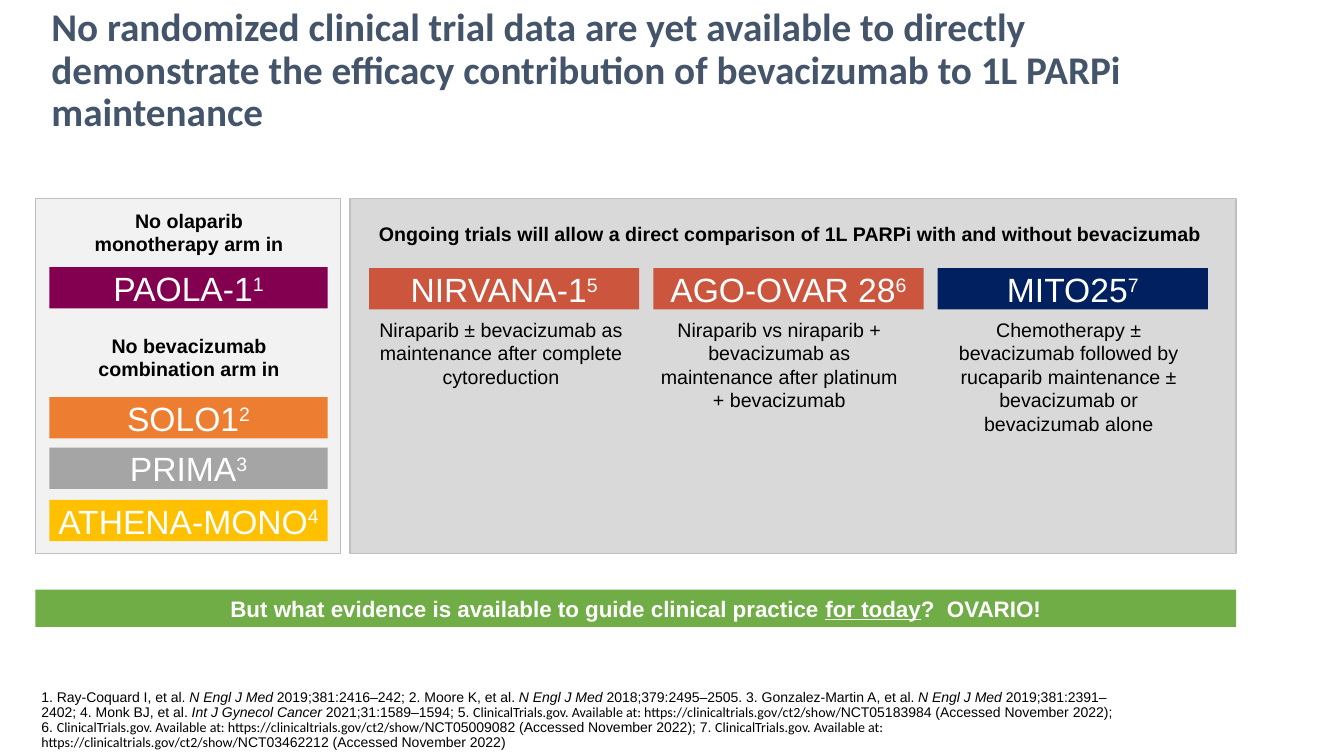
from lxml import etree
from pptx import Presentation
from pptx.dml.color import RGBColor
from pptx.enum.shapes import MSO_SHAPE
from pptx.enum.text import MSO_ANCHOR, MSO_AUTO_SIZE, PP_ALIGN
from pptx.oxml.ns import qn
from pptx.util import Inches, Pt

RECTANGLE = MSO_SHAPE.RECTANGLE
MIDDLE, BOTTOM, TOP = MSO_ANCHOR.MIDDLE, MSO_ANCHOR.BOTTOM, MSO_ANCHOR.TOP
LEFT, CENTER = PP_ALIGN.LEFT, PP_ALIGN.CENTER
NO_AUTOFIT = MSO_AUTO_SIZE.NONE

REGISTRY = "ClinicalTrials.gov. Available at: https://clinicaltrials.gov/ct2/show/"
REFERENCES = [
    ("1. Ray-Coquard I, et al. ", ""),
    ("N Engl J Med", "italic"),
    (" 2019;381:2416–242; 2. Moore K, et al. ", ""),
    ("N Engl J Med ", "italic"),
    ("2018;379:2495–2505. 3. Gonzalez-Martin A, et al. ", ""),
    ("N Engl J Med", "italic"),
    (" 2019;381:2391–2402; 4. Monk BJ, et al. ", ""),
    ("Int J Gynecol Cancer ", "italic"),
    ("2021;31:1589–1594; 5. ", ""),
    (REGISTRY, "registry"),
    ("NCT05183984 (Accessed November 2022); 6. ", ""),
    (REGISTRY, "registry"),
    ("NCT05009082 (Accessed November 2022); 7. ", ""),
    (REGISTRY, "registry"),
    ("NCT03462212 (Accessed November 2022)", ""),
]

# name, reference number, top, fill
COMPLETED_TRIALS = [
    ("PAOLA-1", "1", 2.65, "830051"),
    ("SOLO1", "2", 3.94, "ED7D31"),
    ("PRIMA", "3", 4.44, "A5A5A5"),
    ("ATHENA-MONO", "4", 4.96, "FFC000"),
]

# name, reference number, fill, left of the design text, design
ONGOING_TRIALS = [
    ("NIRVANA-1", "5", "CB553D", 3.64,
     "Niraparib ± bevacizumab as maintenance after complete cytoreduction"),
    ("AGO-OVAR 28", "6", "CB553D", 6.4,
     "Niraparib vs niraparib + bevacizumab as maintenance after platinum + bevacizumab"),
    ("MITO25", "7", "002060", 9.27,
     "Chemotherapy ± bevacizumab followed by rucaparib maintenance ± "
     "bevacizumab or bevacizumab alone"),
]


def color(hex_string):
    return RGBColor.from_string(hex_string)


def place(shape, left, top, width, height):
    shape.left, shape.top = Inches(left), Inches(top)
    shape.width, shape.height = Inches(width), Inches(height)


class TrialSlide:
    def __init__(self, slide):
        self.slide = slide
        self.font = "Arial"
        self.title_font = "Calibri"

    def fill_text(self, frame, content, size, ink="000000", bold=False,
                  align=CENTER, anchor=TOP, font=None):
        """Fill a frame with a string or a list of (text, style) runs."""
        frame.word_wrap = True
        frame.auto_size = NO_AUTOFIT
        frame.vertical_anchor = anchor
        paragraph = frame.paragraphs[0]
        paragraph.alignment = align
        paragraph.font.name = font or self.font
        paragraph.font.size = Pt(size)
        paragraph.font.bold = bold
        paragraph.font.color.rgb = color(ink)
        if isinstance(content, str):
            paragraph.text = content
            return paragraph
        for text, style in content:
            run = paragraph.add_run()
            run.text = text
            if style == "italic":
                run.font.italic = True
            elif style == "underline":
                run.font.underline = True
            elif style == "registry":
                run.font.name = self.title_font
            elif style == "superscript":
                run._r.get_or_add_rPr().set("baseline", "30000")
        return paragraph

    def title(self, text, *box):
        heading = self.slide.shapes.title
        place(heading, *box)
        paragraph = self.fill_text(heading.text_frame, text, 28, "44546A", True,
                                   LEFT, BOTTOM, self.title_font)
        paragraph.line_spacing = 0.9

    def references(self, runs, *box):
        body = self.slide.placeholders[1]
        place(body, *box)
        frame = body.text_frame
        frame.margin_left = frame.margin_right = 0
        frame.margin_top = frame.margin_bottom = 0
        paragraph = self.fill_text(frame, runs, 10, align=LEFT, anchor=BOTTOM)
        paragraph.line_spacing = 0.9
        paragraph.space_before = Pt(0)
        properties = paragraph._p.get_or_add_pPr()
        properties.set("marL", "0")
        properties.set("indent", "0")
        no_bullet = etree.Element(qn("a:buNone"))
        properties.find(qn("a:defRPr")).addprevious(no_bullet)

    def block(self, fill, *box, outline=None):
        rectangle = self.slide.shapes.add_shape(RECTANGLE, *map(Inches, box))
        rectangle.shadow.inherit = False
        rectangle.fill.solid()
        rectangle.fill.fore_color.rgb = color(fill)
        if outline:
            rectangle.line.color.rgb = color(outline)
            rectangle.line.width = Pt(1)
        else:
            rectangle.line.fill.background()
        return rectangle

    def trial_label(self, name, reference, fill, *box):
        frame = self.block(fill, *box).text_frame
        frame.margin_left = frame.margin_right = Inches(0.04)
        self.fill_text(frame, [(name, ""), (reference, "superscript")], 24,
                       "FFFFFF", anchor=MIDDLE)

    def banner(self, runs, fill, *box):
        self.fill_text(self.block(fill, *box).text_frame, runs, 16, "FFFFFF",
                       True, anchor=MIDDLE)

    def text(self, content, *box, bold=False):
        label = self.slide.shapes.add_textbox(*map(Inches, box))
        self.fill_text(label.text_frame, content, 14, bold=bold)


def main():
    deck = Presentation()
    deck.slide_width, deck.slide_height = Inches(13.33), Inches(7.5)
    page = TrialSlide(deck.slides.add_slide(deck.slide_layouts[1]))

    page.title("No randomized clinical trial data are yet available to directly "
               "demonstrate the efficacy contribution of bevacizumab to 1L PARPi "
               "maintenance", 0.41, 0.35, 11.91, 1.04)
    page.references(REFERENCES, 0.41, 6.85, 10.77, 0.6)

    page.block("D9D9D9", 3.47, 1.97, 8.79, 3.52, outline="BFBFBF")
    page.block("F2F2F2", 0.35, 1.97, 3.03, 3.52, outline="BFBFBF")

    page.text("No olaparib\vmonotherapy arm in", 0.53, 2.02, 2.69, 0.57, bold=True)
    page.text("No bevacizumab combination arm in", 0.53, 3.26, 2.69, 0.57, bold=True)
    for name, reference, top, fill in COMPLETED_TRIALS:
        page.trial_label(name, reference, fill, 0.49, top, 2.76, 0.41)

    page.text("Ongoing trials will allow a direct comparison of 1L PARPi with and "
              "without bevacizumab", 3.66, 2.15, 8.36, 0.34, bold=True)
    for column, (name, reference, fill, design_left, design) in enumerate(ONGOING_TRIALS):
        page.trial_label(name, reference, fill, 3.66 + column * 2.82, 2.66, 2.68, 0.41)
        page.text(design, design_left, 3.1, 2.66, 1.28)

    page.banner([("But what evidence is available to guide clinical practice ", ""),
                 ("for today", "underline"), ("?  OVARIO!", "")],
                "70AD47", 0.35, 5.85, 11.91, 0.37)

    deck.save("out.pptx")


if __name__ == "__main__":
    main()
